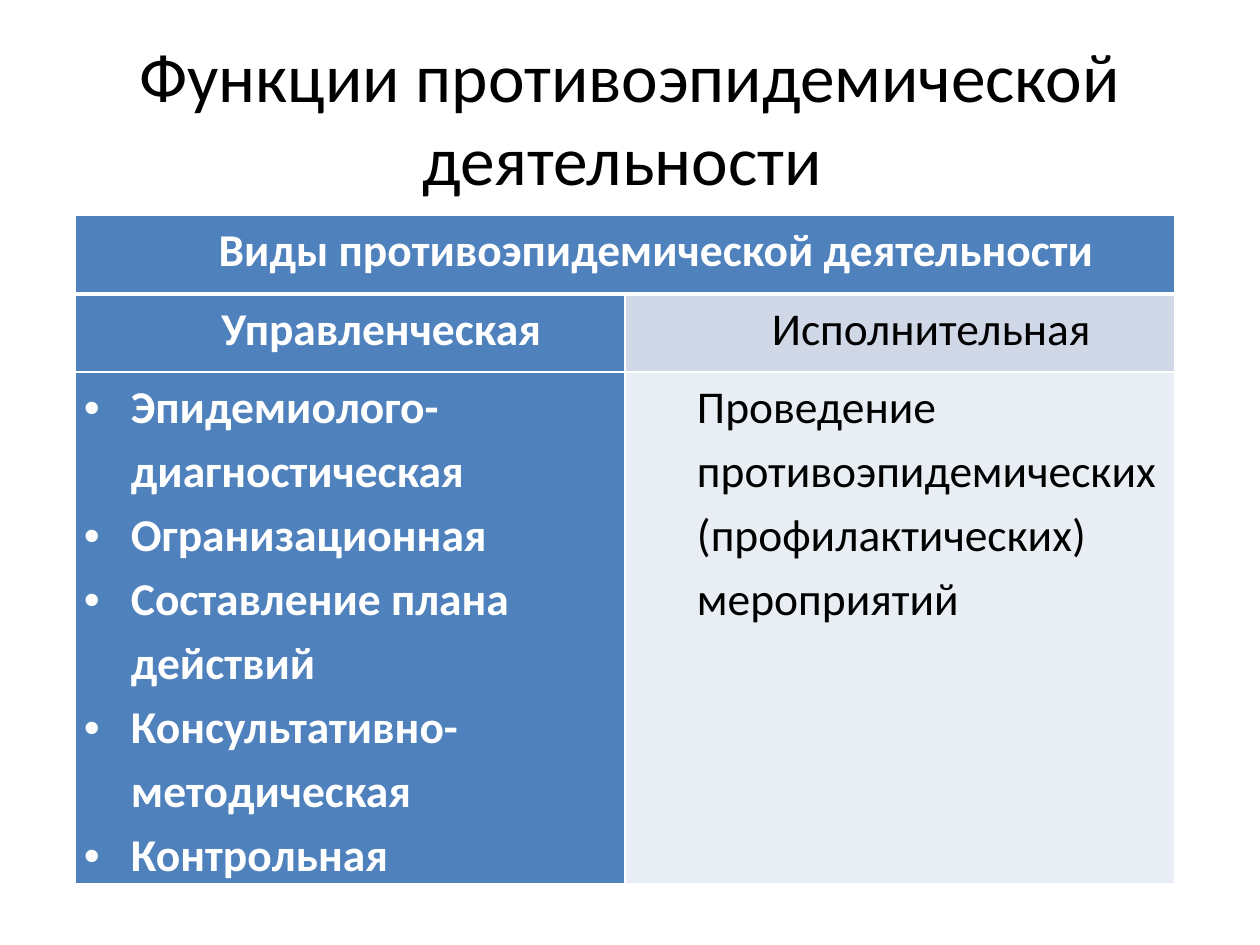
from lxml import etree
from pptx import Presentation
from pptx.dml.color import RGBColor
from pptx.enum.text import MSO_ANCHOR, PP_ALIGN
from pptx.oxml import parse_xml
from pptx.oxml.ns import nsdecls, qn
from pptx.util import Emu, Pt

CENTER, JUSTIFY, LEFT = PP_ALIGN.CENTER, PP_ALIGN.JUSTIFY, PP_ALIGN.LEFT
MIDDLE = MSO_ANCHOR.MIDDLE
FONT = "Calibri"
WHITE, BLACK, BLUE = "FFFFFF", "000000", "4F81BD"
PALE, PALER = "D0D8E8", "E9EDF4"
ROW_HEIGHTS = [79, 78, 512]
COLUMN_WIDTH = 550
FUNCTIONS = [
    "Эпидемиолого-диагностическая",
    "Огранизационная",
    "Составление плана действий",
    "Консультативно-методическая",
    "Контрольная",
]


def px(length):
    """Turn pixels at 126 to the inch into EMU."""
    return Emu(round(length * 914400 / 126))


def color(value):
    """Turn a hex string into a colour."""
    return RGBColor.from_string(value)


def style(para, size, ink, align, bold=False):
    """Set the font and alignment of a paragraph."""
    para.alignment = align
    para.font.name = FONT
    para.font.size = Pt(size)
    para.font.bold = bold
    para.font.color.rgb = color(ink)


def indent(para, margin, first=0, bullet=False):
    """Indent a paragraph and give it a bullet if asked."""
    props = para._p.get_or_add_pPr()
    props.set("marL", str(px(margin)))
    props.set("indent", str(px(first)))
    if bullet:
        marks = [parse_xml(f'<a:buFont {nsdecls("a")} typeface="Arial"/>'),
                 parse_xml(f'<a:buChar {nsdecls("a")} char="•"/>')]
        place = props.index(props.find(qn("a:defRPr")))
        props[place:place] = marks


def add_borders(cell, top, bottom):
    """Draw white borders around a cell, widths in points."""
    props = cell._tc.get_or_add_tcPr()
    sides = [("lnL", 1), ("lnR", 1), ("lnT", top), ("lnB", bottom)]
    for place, (side, width) in enumerate(sides):
        line = etree.Element(qn(f"a:{side}"), w=str(Pt(width)))
        fill = etree.SubElement(line, qn("a:solidFill"))
        etree.SubElement(fill, qn("a:srgbClr"), val=WHITE)
        props.insert(place, line)


def fill_cell(cell, lines, fill, ink, align=CENTER, bullet=False):
    """Write paragraphs into a cell and colour it."""
    cell.margin_left = cell.margin_right = px(9)
    cell.margin_top = cell.margin_bottom = 0
    cell.fill.solid()
    cell.fill.fore_color.rgb = color(fill)
    frame = cell.text_frame
    frame.text = "\n".join(lines)
    for para in frame.paragraphs:
        style(para, 26, ink, align, bold=ink == WHITE)
        para.line_spacing = 1.15
        indent(para, *((47, -47, True) if bullet else (63,)))


def add_title(page, text):
    """Add the centred heading."""
    box = page.shapes.add_textbox(px(63), px(38), px(1134), px(157))
    frame = box.text_frame
    frame.word_wrap = True
    frame.vertical_anchor = MIDDLE
    frame.text = text
    style(frame.paragraphs[0], 39.6, BLACK, CENTER)


def add_activity_table(page):
    """Add the table of activity kinds and their functions."""
    table = page.shapes.add_table(
        len(ROW_HEIGHTS), 2, px(75), px(215),
        px(2 * COLUMN_WIDTH), px(sum(ROW_HEIGHTS))).table
    for column in table.columns:
        column.width = px(COLUMN_WIDTH)
    for row, height in zip(table.rows, ROW_HEIGHTS):
        row.height = px(height)
    table.cell(0, 0).merge(table.cell(0, 1))
    fill_cell(table.cell(0, 0), ["Виды противоэпидемической деятельности"], BLUE, WHITE)
    fill_cell(table.cell(1, 0), ["Управленческая"], BLUE, WHITE)
    fill_cell(table.cell(1, 1), ["Исполнительная"], PALE, BLACK)
    fill_cell(table.cell(2, 0), FUNCTIONS, BLUE, WHITE, LEFT, bullet=True)
    fill_cell(table.cell(2, 1),
              ["Проведение противоэпидемических (профилактических) мероприятий"],
              PALER, BLACK, JUSTIFY)
    for number, row in enumerate(table.rows):
        for cell in row.cells:
            add_borders(cell, 3 if number == 1 else 1, 3 if number == 0 else 1)


def main():
    """Build the slide and save it."""
    deck = Presentation()
    deck.slide_width, deck.slide_height = px(1260), px(945)
    page = deck.slides.add_slide(deck.slide_layouts[6])
    add_title(page, "Функции противоэпидемической деятельности ")
    add_activity_table(page)
    deck.save("out.pptx")


if __name__ == "__main__":
    main()
